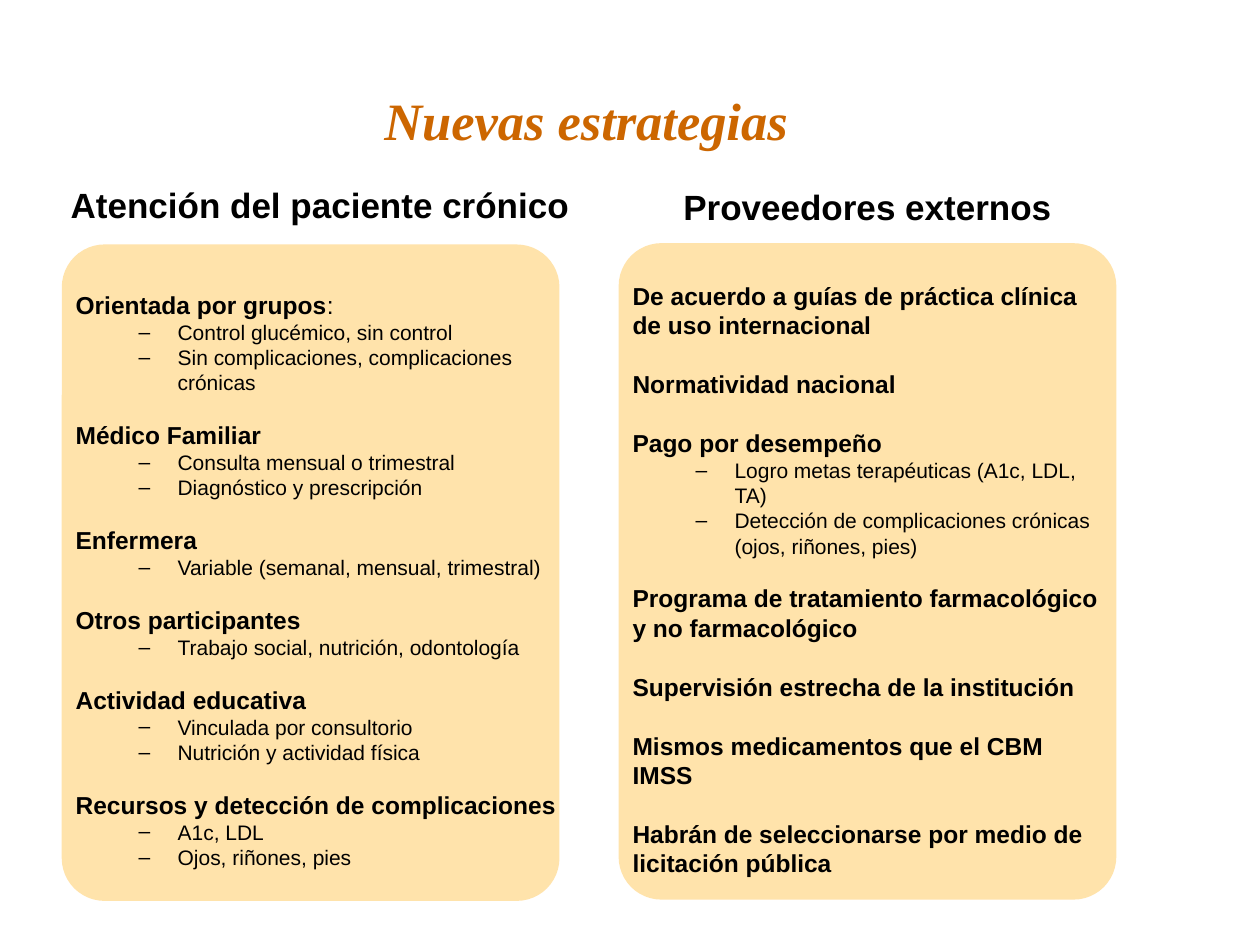
"""Build the slide that compares chronic patient care with external providers."""
from dataclasses import dataclass

from lxml.etree import SubElement
from pptx import Presentation
from pptx.dml.color import RGBColor
from pptx.enum.shapes import MSO_SHAPE
from pptx.enum.text import MSO_ANCHOR, MSO_AUTO_SIZE, PP_ALIGN
from pptx.oxml.ns import qn
from pptx.shapes.base import BaseShape
from pptx.slide import Slide
from pptx.text.text import TextFrame, _Paragraph as Paragraph
from pptx.util import Inches, Pt


@dataclass(frozen=True)
class Theme:
    """Colours, fonts and type sizes of the slide."""

    title_color: RGBColor = RGBColor(0xCC, 0x66, 0x00)
    text_color: RGBColor = RGBColor(0x00, 0x00, 0x00)
    panel_color: RGBColor = RGBColor(0xFF, 0xE3, 0xAB)
    title_font: str = "Times New Roman"
    body_font: str = "Arial"
    title_size: int = 30
    heading_size: int = 20
    topic_size: int = 14
    detail_size: int = 12
    line_factor: float = 1.2


@dataclass(frozen=True)
class Box:
    """A position and a size in inches."""

    left: float
    top: float
    width: float
    height: float


@dataclass(frozen=True)
class Topic:
    """A bold topic with an optional plain ending and its details."""

    text: str
    details: tuple[str, ...] = ()
    ending: str = ""


@dataclass(frozen=True)
class Column:
    """A heading and a panel of topics, with their placeholder indexes."""

    heading: str
    heading_index: int
    heading_box: Box
    panel_box: Box
    list_index: int
    list_box: Box
    topics: tuple[Topic, ...]


THEME = Theme()
TITLE_BOX = Box(2.95, 0.65, 3.44, 0.61)
COLUMNS = (
    Column(
        "Atención del paciente crónico", 1, Box(0.35, 1.41, 4.38, 0.7),
        Box(0.49, 1.94, 3.95, 5.21), 2, Box(0.5, 2.25, 4.11, 4.76),
        (
            Topic("Orientada por grupos",
                  ("Control glucémico, sin control", "Sin complicaciones, complicaciones crónicas"), ":"),
            Topic("Médico Familiar", ("Consulta mensual o trimestral", "Diagnóstico y prescripción")),
            Topic("Enfermera", ("Variable (semanal, mensual, trimestral)",)),
            Topic("Otros participantes", ("Trabajo social, nutrición, odontología",)),
            Topic("Actividad educativa", ("Vinculada por consultorio", "Nutrición y actividad física")),
            Topic("Recursos y detección de complicaciones", ("A1c, LDL", "Ojos, riñones, pies")),
        ),
    ),
    Column(
        "Proveedores externos", 3, Box(4.91, 1.42, 3.95, 0.7),
        Box(4.91, 1.93, 3.95, 5.21), 4, Box(4.92, 2.18, 3.94, 4.96),
        (
            Topic("De acuerdo a guías de práctica clínica de uso internacional"),
            Topic("Normatividad nacional"),
            Topic("Pago por desempeño",
                  ("Logro metas terapéuticas (A1c, LDL, TA)",
                   "Detección de complicaciones crónicas (ojos, riñones, pies)")),
            Topic("Programa de tratamiento farmacológico y no farmacológico"),
            Topic("Supervisión estrecha de la institución"),
            Topic("Mismos medicamentos que el CBM IMSS"),
            Topic("Habrán de seleccionarse por medio de licitación pública"),
        ),
    ),
)


def place(shape: BaseShape, box: Box) -> None:
    """Move and resize a shape."""
    shape.left, shape.top = Inches(box.left), Inches(box.top)
    shape.width, shape.height = Inches(box.width), Inches(box.height)


def prepare_frame(shape: BaseShape, box: Box, wrap: bool = True) -> TextFrame:
    """Place a placeholder and return its text frame, anchored at the top."""
    place(shape, box)
    frame = shape.text_frame
    frame.auto_size = MSO_AUTO_SIZE.NONE
    frame.word_wrap = wrap
    frame.vertical_anchor = MSO_ANCHOR.TOP
    return frame


def add_run(paragraph: Paragraph, text: str, size: int, bold: bool = True,
            italic: bool = False, font: str = THEME.body_font,
            color: RGBColor = THEME.text_color) -> None:
    """Add one formatted run."""
    run = paragraph.add_run()
    run.text = text
    run.font.name = font
    run.font.size = Pt(size)
    run.font.bold = bold
    run.font.italic = italic
    run.font.color.rgb = color


def format_paragraph(paragraph: Paragraph, size: int, gap: float = 0,
                     alignment: PP_ALIGN = PP_ALIGN.LEFT) -> None:
    """Set the alignment and the spacing of a paragraph."""
    paragraph.alignment = alignment
    paragraph.line_spacing = Pt(size * THEME.line_factor)
    paragraph.space_before = Pt(gap)
    paragraph.space_after = Pt(0)


def set_bullet(paragraph: Paragraph, character: str = "") -> None:
    """Give a paragraph a hanging bullet, or none when there is no character."""
    properties = paragraph._p.get_or_add_pPr()
    properties.set("marL", str(Inches(0.81) if character else 0))
    properties.set("indent", str(Inches(-0.31) if character else 0))
    if character:
        SubElement(properties, qn("a:buFont"), typeface=THEME.body_font)
        SubElement(properties, qn("a:buChar"), char=character)
    else:
        SubElement(properties, qn("a:buNone"))


def write_topics(frame: TextFrame, topics: tuple[Topic, ...]) -> None:
    """Write the topics, each one line apart from the topic before."""
    gap = 0.0
    for position, topic in enumerate(topics):
        paragraph = frame.add_paragraph() if position else frame.paragraphs[0]
        set_bullet(paragraph)
        format_paragraph(paragraph, THEME.topic_size, gap)
        add_run(paragraph, topic.text, THEME.topic_size)
        if topic.ending:
            add_run(paragraph, topic.ending, THEME.topic_size, bold=False)
        for detail in topic.details:
            paragraph = frame.add_paragraph()
            paragraph.level = 1
            set_bullet(paragraph, "–")
            format_paragraph(paragraph, THEME.detail_size)
            add_run(paragraph, detail, THEME.detail_size, bold=False)
        last_size = THEME.detail_size if topic.details else THEME.topic_size
        gap = last_size * THEME.line_factor


def draw_panel(slide: Slide, box: Box) -> None:
    """Draw a rounded panel behind the text."""
    shape = slide.shapes.add_shape(MSO_SHAPE.ROUNDED_RECTANGLE, 0, 0, 0, 0)
    place(shape, box)
    shape.adjustments[0] = 0.086
    shape.shadow.inherit = False
    shape.fill.solid()
    shape.fill.fore_color.rgb = THEME.panel_color
    shape.line.fill.background()
    slide.shapes.element.insert(2, shape.element)


def draw_column(slide: Slide, column: Column) -> None:
    """Draw a panel with its heading and topics."""
    draw_panel(slide, column.panel_box)
    placeholders = {shape.placeholder_format.idx: shape for shape in slide.placeholders}
    paragraph = prepare_frame(placeholders[column.heading_index], column.heading_box).paragraphs[0]
    format_paragraph(paragraph, THEME.heading_size, alignment=PP_ALIGN.CENTER)
    add_run(paragraph, column.heading, THEME.heading_size)
    write_topics(prepare_frame(placeholders[column.list_index], column.list_box), column.topics)


def main() -> None:
    """Build and save the presentation."""
    presentation = Presentation()
    presentation.slide_width, presentation.slide_height = Inches(10), Inches(7.5)
    slide = presentation.slides.add_slide(presentation.slide_layouts.get_by_name("Comparison"))
    paragraph = prepare_frame(slide.shapes.title, TITLE_BOX, wrap=False).paragraphs[0]
    format_paragraph(paragraph, THEME.title_size)
    add_run(paragraph, "Nuevas estrategias", THEME.title_size, italic=True,
            font=THEME.title_font, color=THEME.title_color)
    for column in COLUMNS:
        draw_column(slide, column)
    presentation.save("out.pptx")


if __name__ == "__main__":
    main()
